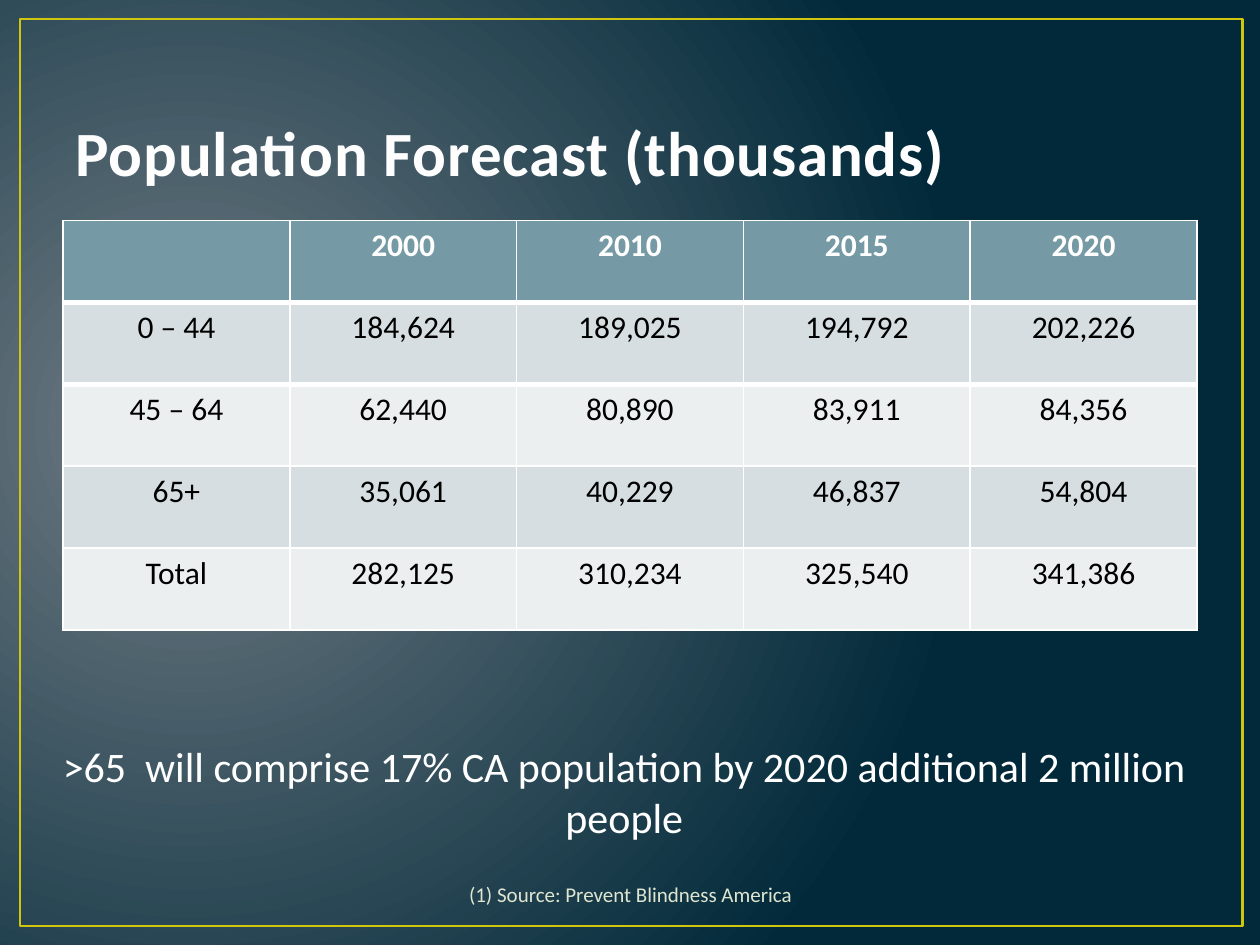
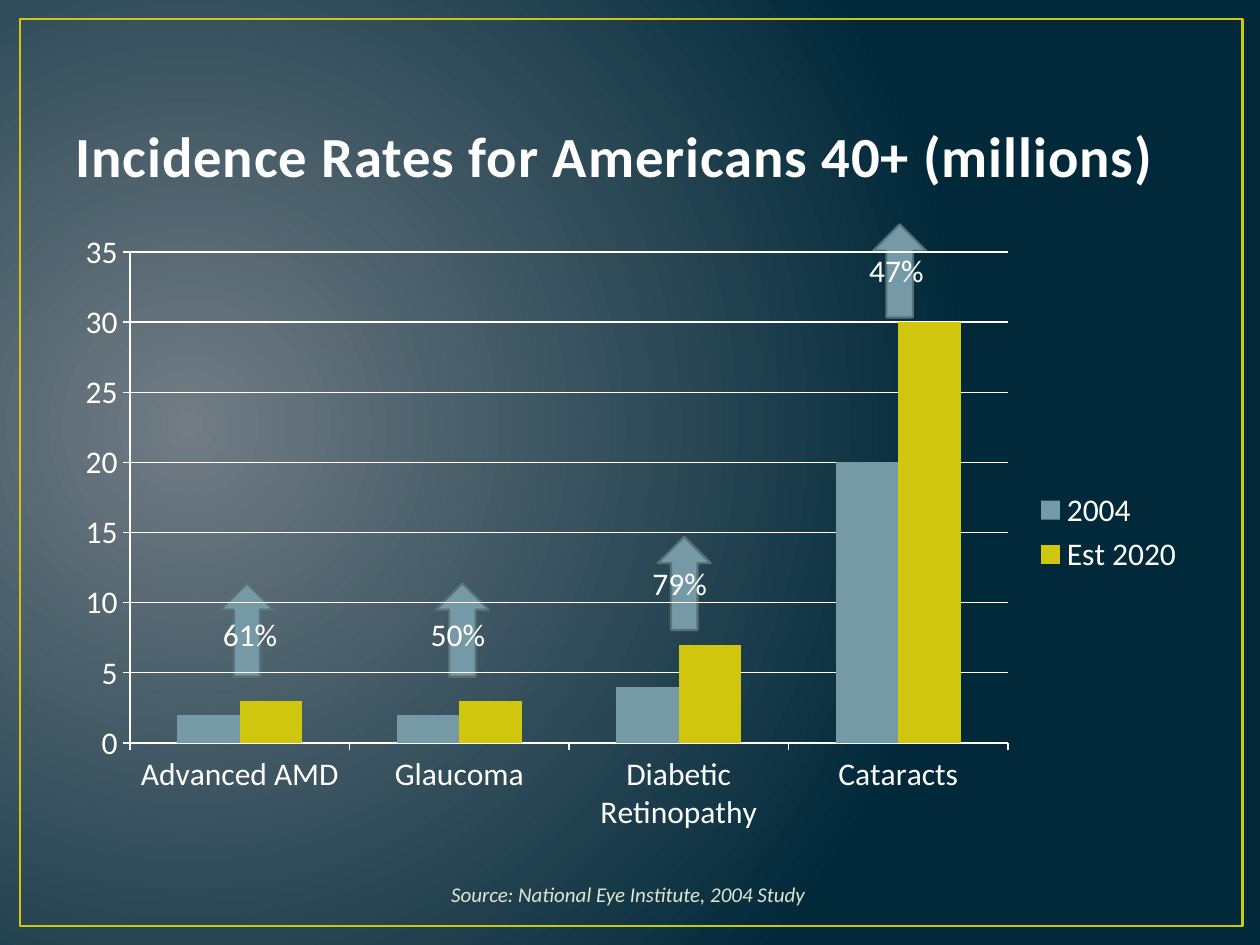
from collections import namedtuple

from lxml.etree import SubElement
from pptx import Presentation
from pptx.chart.data import CategoryChartData
from pptx.dml.color import RGBColor
from pptx.enum.chart import XL_CHART_TYPE, XL_LEGEND_POSITION, XL_TICK_MARK
from pptx.enum.shapes import MSO_SHAPE
from pptx.enum.text import MSO_ANCHOR, MSO_AUTO_SIZE, PP_ALIGN
from pptx.oxml.ns import qn
from pptx.util import Inches, Pt

FONT = "Calibri"
COLOURS = {
    "glow": "717C84",
    "night": "01293A",
    "yellow": "CFC60D",
    "teal": "759AA5",
    "teal_edge": "57727A",
    "title": "FEFEFE",
    "title_edge": "384F55",
    "source": "DFE6D0",
    "white": "FFFFFF",
    "black": "000000",
    "band_dark": "D6DEE1",
    "band_light": "ECEFF0",
}

Box = namedtuple("Box", "left top width height")
FRAME = Box(0.16, 0.15, 9.7, 7.2)
TITLE = Box(0.5, 0.3, 9, 1.25)
TABLE = Box(0.5, 1.75, 9, 3.25)
CHART = Box(0.5, 1.75, 9, 4.95)
NOTE = Box(0.25, 5.83, 9.41, 0.91)
SOURCE = Box(3.1, 6.9, 3.81, 0.4)

POPULATION = [
    ["", "2000", "2010", "2015", "2020"],
    ["0 – 44", "184,624", "189,025", "194,792", "202,226"],
    ["45 – 64", "62,440", "80,890", "83,911", "84,356"],
    ["65+", "35,061", "40,229", "46,837", "54,804"],
    ["Total", "282,125", "310,234", "325,540", "341,386"],
]
CONDITIONS = ["Advanced AMD", "Glaucoma", "Diabetic Retinopathy", "Cataracts"]
INCIDENCE = [
    ("2004", [2, 2, 4, 20], "teal"),
    ("Est 2020", [3, 3, 7, 30], "yellow"),
]
# Growth, arrow left and top, label left and top, measured from the chart's corner
INCREASES = [
    ("61%", 1.25, 2.88, 1.17, 3.08),
    ("50%", 2.96, 2.88, 2.82, 3.08),
    ("79%", 4.72, 2.51, 4.58, 2.68),
    ("47%", 6.43, 0.03, 6.3, 0.19),
]


def rgb(name):
    return RGBColor.from_string(COLOURS[name])


def inches(box):
    return [Inches(length) for length in box]


def style_font(font, size, colour, bold=False, italic=False):
    font.name = FONT
    font.size = Pt(size)
    font.bold = bold
    font.italic = italic
    font.color.rgb = rgb(colour)


def style_line(line, colour, width):
    line.color.rgb = rgb(colour)
    line.width = Pt(width)


def insert_line(properties, tag, colour, width):
    """Put a solid line first among text or cell properties."""
    line = SubElement(properties, qn(tag), w=str(Pt(width)))
    fill = SubElement(line, qn("a:solidFill"))
    SubElement(fill, qn("a:srgbClr"), val=COLOURS[colour])
    properties.insert(0, line)


def set_background(master):
    """Give the master a circular gradient that glows at the left."""
    fill = master.background.fill
    fill.gradient()
    for stop, name in zip(fill.gradient_stops, ("glow", "night")):
        stop.color.rgb = rgb(name)
    gradient = master.element.find(".//" + qn("a:gradFill"))
    gradient.remove(gradient.find(qn("a:lin")))
    circle = SubElement(gradient, qn("a:path"), path="circle")
    SubElement(circle, qn("a:fillToRect"), l="15000", t="50000", r="85000", b="60000")


def add_frame(page, box):
    frame = page.shapes.add_shape(MSO_SHAPE.RECTANGLE, *inches(box))
    frame.shadow.inherit = False
    frame.fill.background()
    style_line(frame.line, "yellow", 1.5)


def set_title(page, box, text, size):
    title = page.shapes.title
    title.left, title.top, title.width, title.height = inches(box)
    frame = title.text_frame
    frame.text = text
    frame.vertical_anchor = MSO_ANCHOR.BOTTOM
    frame.auto_size = MSO_AUTO_SIZE.NONE
    para = frame.paragraphs[0]
    para.alignment = PP_ALIGN.LEFT
    font = para.runs[0].font
    style_font(font, size, "title", bold=True)
    properties = font._element
    properties.set("spc", "50")
    insert_line(properties, "a:ln", "title_edge", 1.05)


def add_text(page, box, text, size, colour, italic=False, align=PP_ALIGN.CENTER):
    frame = page.shapes.add_textbox(*inches(box)).text_frame
    frame.text = text
    frame.word_wrap = True
    para = frame.paragraphs[0]
    para.alignment = align
    style_font(para.runs[0].font, size, colour, italic=italic)
    return frame


def add_source(page, box, text, italic=False):
    frame = add_text(page, box, text, 12, "source", italic)
    frame.vertical_anchor = MSO_ANCHOR.MIDDLE


def add_population_table(page, box):
    """Draw a header row and banded rows in equal columns."""
    table = page.shapes.add_table(len(POPULATION), len(POPULATION[0]), *inches(box)).table
    for row, values in enumerate(POPULATION):
        header = row == 0
        band = "teal" if header else "band_dark" if row % 2 else "band_light"
        for column, value in enumerate(values):
            cell = table.cell(row, column)
            cell.fill.solid()
            cell.fill.fore_color.rgb = rgb(band)
            if header:
                insert_line(cell._tc.tcPr, "a:lnB", "white", 3)
            elif row == 1:
                insert_line(cell._tc.tcPr, "a:lnT", "white", 3)
            cell.text = value
            para = cell.text_frame.paragraphs[0]
            para.alignment = PP_ALIGN.CENTER
            for span in para.runs:
                style_font(span.font, 18, "white" if header else "black", bold=header)


def add_incidence_chart(page, box):
    data = CategoryChartData()
    data.categories = CONDITIONS
    for name, values, _ in INCIDENCE:
        data.add_series(name, values)
    chart = page.shapes.add_chart(XL_CHART_TYPE.COLUMN_CLUSTERED, *inches(box), data).chart
    style_font(chart.font, 18, "white")
    chart.has_title = False
    chart.has_legend = True
    chart.legend.position = XL_LEGEND_POSITION.RIGHT
    chart.legend.include_in_layout = False

    plot = chart.plots[0]
    plot.vary_by_categories = False
    plot.gap_width = 150
    for series, (_, _, colour) in zip(plot.series, INCIDENCE):
        series.format.fill.solid()
        series.format.fill.fore_color.rgb = rgb(colour)

    for axis in (chart.category_axis, chart.value_axis):
        axis.major_tick_mark = XL_TICK_MARK.OUTSIDE
        style_line(axis.format.line, "white", 0.75)
    scale = chart.value_axis
    scale.minimum_scale, scale.maximum_scale, scale.major_unit = 0, 35, 5
    scale.has_major_gridlines = True
    style_line(scale.major_gridlines.format.line, "white", 0.75)


def add_increase_arrows(page, box):
    for _, left, top, _, _ in INCREASES:
        place = Box(box.left + left, box.top + top, 0.42, 0.74)
        arrow = page.shapes.add_shape(MSO_SHAPE.UP_ARROW, *inches(place))
        arrow.shadow.inherit = False
        arrow.fill.solid()
        arrow.fill.fore_color.rgb = rgb("teal")
        style_line(arrow.line, "teal_edge", 1.25)


def add_increase_labels(page, box):
    for text, _, _, left, top in INCREASES:
        place = Box(box.left + left, box.top + top, 0.69, 0.4)
        frame = add_text(page, place, text, 18, "white", align=PP_ALIGN.LEFT)
        frame.word_wrap = False
        frame.auto_size = MSO_AUTO_SIZE.SHAPE_TO_FIT_TEXT


def add_page(deck, title, size):
    """Start a page with the shared frame and title."""
    page = deck.slides.add_slide(deck.slide_layouts[5])
    add_frame(page, FRAME)
    set_title(page, TITLE, title, size)
    return page


def build_population_page(deck):
    page = add_page(deck, "Population Forecast (thousands)", 36)
    add_population_table(page, TABLE)
    add_source(page, SOURCE, "(1) Source: Prevent Blindness America")
    note = ">65  will comprise 17% CA population by 2020 additional 2 million people"
    add_text(page, NOTE, note, 24, "white")


def build_incidence_page(deck):
    page = add_page(deck, "Incidence Rates for Americans 40+ (millions)", 32.4)
    add_increase_arrows(page, CHART)
    add_incidence_chart(page, CHART)
    add_source(page, SOURCE, "Source: National Eye Institute, 2004 Study ", italic=True)
    add_increase_labels(page, CHART)


def main():
    deck = Presentation()
    deck.slide_width, deck.slide_height = Inches(10), Inches(7.5)
    set_background(deck.slide_master)
    build_population_page(deck)
    build_incidence_page(deck)
    deck.save("out.pptx")


if __name__ == "__main__":
    main()
